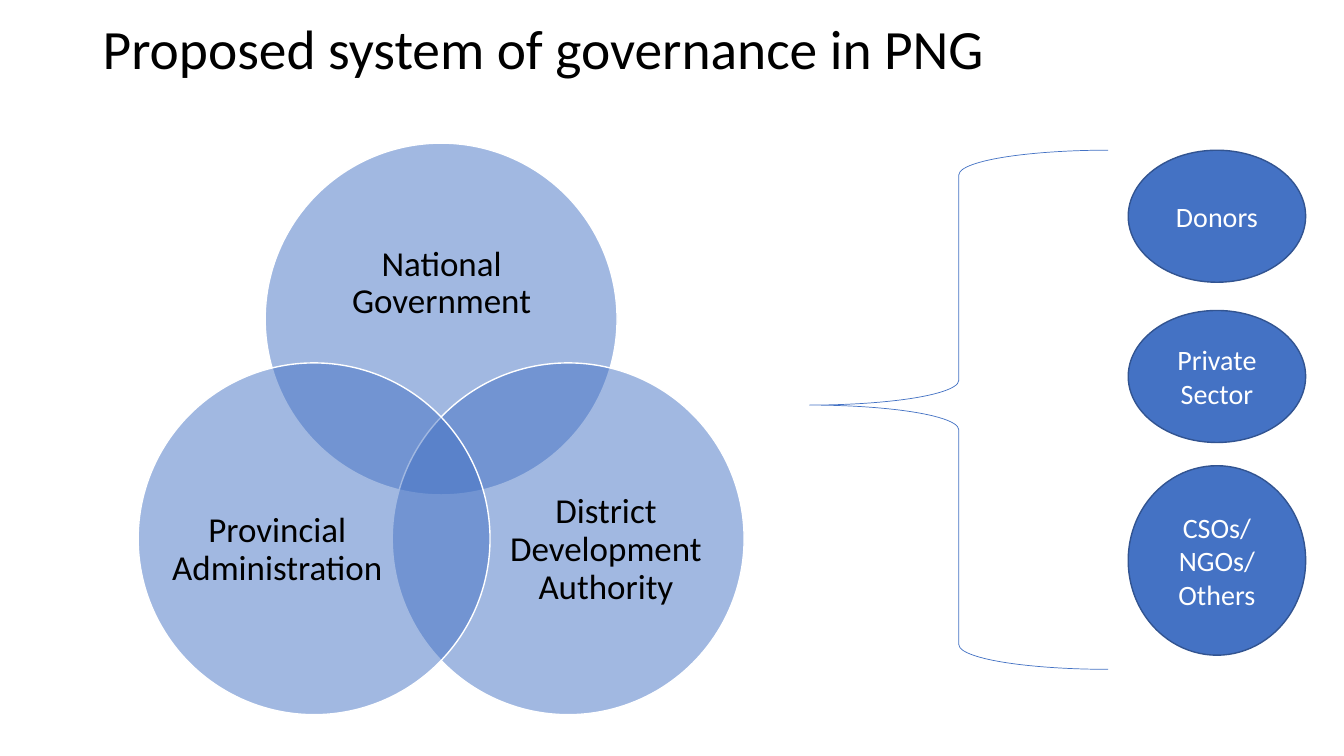
from dataclasses import dataclass

from lxml.etree import SubElement
from pptx import Presentation
from pptx.dml.color import RGBColor
from pptx.enum.shapes import MSO_SHAPE
from pptx.enum.text import MSO_ANCHOR, PP_ALIGN
from pptx.oxml.ns import qn
from pptx.util import Pt

PX = 9144  # EMU in one px, 100 px to the inch


@dataclass(frozen=True)
class Theme:
    font: str = "Calibri"
    blue: RGBColor = RGBColor(0x44, 0x72, 0xC4)
    dark_blue: RGBColor = RGBColor(0x32, 0x54, 0x91)
    black: RGBColor = RGBColor(0, 0, 0)
    white: RGBColor = RGBColor(255, 255, 255)
    title_size: float = 39.6
    venn_size: int = 25
    partner_size: int = 20


THEME = Theme()


def emu(*lengths):
    return [length * PX for length in lengths]


def write(shape, lines, size, color, align=PP_ALIGN.CENTER, spacing=1.0):
    frame = shape.text_frame
    frame.word_wrap = True
    frame.vertical_anchor = MSO_ANCHOR.MIDDLE
    frame.text = "\n".join(lines)
    for paragraph in frame.paragraphs:
        paragraph.alignment = align
        paragraph.line_spacing = spacing
        paragraph.font.name = THEME.font
        paragraph.font.size = Pt(size)
        paragraph.font.color.rgb = color


def add_outlined(slide, preset, box, line_color, line_width):
    shape = slide.shapes.add_shape(preset, *emu(*box))
    shape.shadow.inherit = False
    shape.line.color.rgb = line_color
    shape.line.width = Pt(line_width)
    return shape


def add_ellipse(slide, box, line_color, opacity=100):
    ellipse = add_outlined(slide, MSO_SHAPE.OVAL, box, line_color, 1)
    ellipse.fill.solid()
    ellipse.fill.fore_color.rgb = THEME.blue
    if opacity < 100:
        color = ellipse.fill._xPr.find(qn("a:solidFill"))[0]
        SubElement(color, qn("a:alpha"), val=str(opacity * 1000))
    return ellipse


def add_label(slide, box, text):
    label = slide.shapes.add_textbox(*emu(*box))
    frame = label.text_frame
    frame.margin_left = frame.margin_right = 0
    frame.margin_top = frame.margin_bottom = 0
    write(label, [text], THEME.venn_size, THEME.black, spacing=0.9)


def add_title(slide, box, text):
    title = slide.shapes.add_textbox(*emu(*box))
    write(title, [text], THEME.title_size, THEME.black, PP_ALIGN.LEFT, 0.9)


def add_venn(slide, box):
    """Three overlapping circles, one above two, each with a label."""
    left, top, width, height = box
    diameter = 349
    lower = height - diameter
    right = width - diameter
    # circle offset in the region, label box in the circle, label
    circles = (
        (right // 2, 0, (47, 61, 256, 157), "National Government"),
        (right, lower, (107, 90, 210, 192), "District Development Authority"),
        (0, lower, (33, 90, 210, 192), "Provincial Administration"),
    )
    for dx, dy, (label_x, label_y, label_width, label_height), text in circles:
        x, y = left + dx, top + dy
        add_ellipse(slide, (x, y, diameter, diameter), THEME.white, opacity=50)
        add_label(slide, (x + label_x, y + label_y, label_width, label_height), text)


def add_partners(slide, box):
    """A brace on the left, opening onto a column of partner ellipses."""
    left, top, width, height = box
    brace = add_outlined(slide, MSO_SHAPE.LEFT_BRACE, (left, top, 296, height), THEME.blue, 0.5)
    brace.fill.background()
    brace.adjustments[0] = 0.083
    brace.adjustments[1] = 0.491

    ellipse_width = 176
    partners = (
        (0, 131, ["Donors"]),
        (159, 131, ["Private Sector"]),
        (313, 188, ["CSOs/", "NGOs/ Others"]),
    )
    for dy, ellipse_height, lines in partners:
        ellipse_box = (left + width - ellipse_width, top + dy, ellipse_width, ellipse_height)
        ellipse = add_ellipse(slide, ellipse_box, THEME.dark_blue)
        write(ellipse, lines, THEME.partner_size, THEME.white)


def main():
    presentation = Presentation()
    presentation.slide_width, presentation.slide_height = emu(1333, 750)
    slide = presentation.slides.add_slide(presentation.slide_layouts[6])
    add_venn(slide, (137, 142, 601, 567))
    add_partners(slide, (803, 149, 492, 515))
    add_title(slide, (92, 20, 1150, 62), "Proposed system of governance in PNG")
    presentation.save("out.pptx")


if __name__ == "__main__":
    main()
